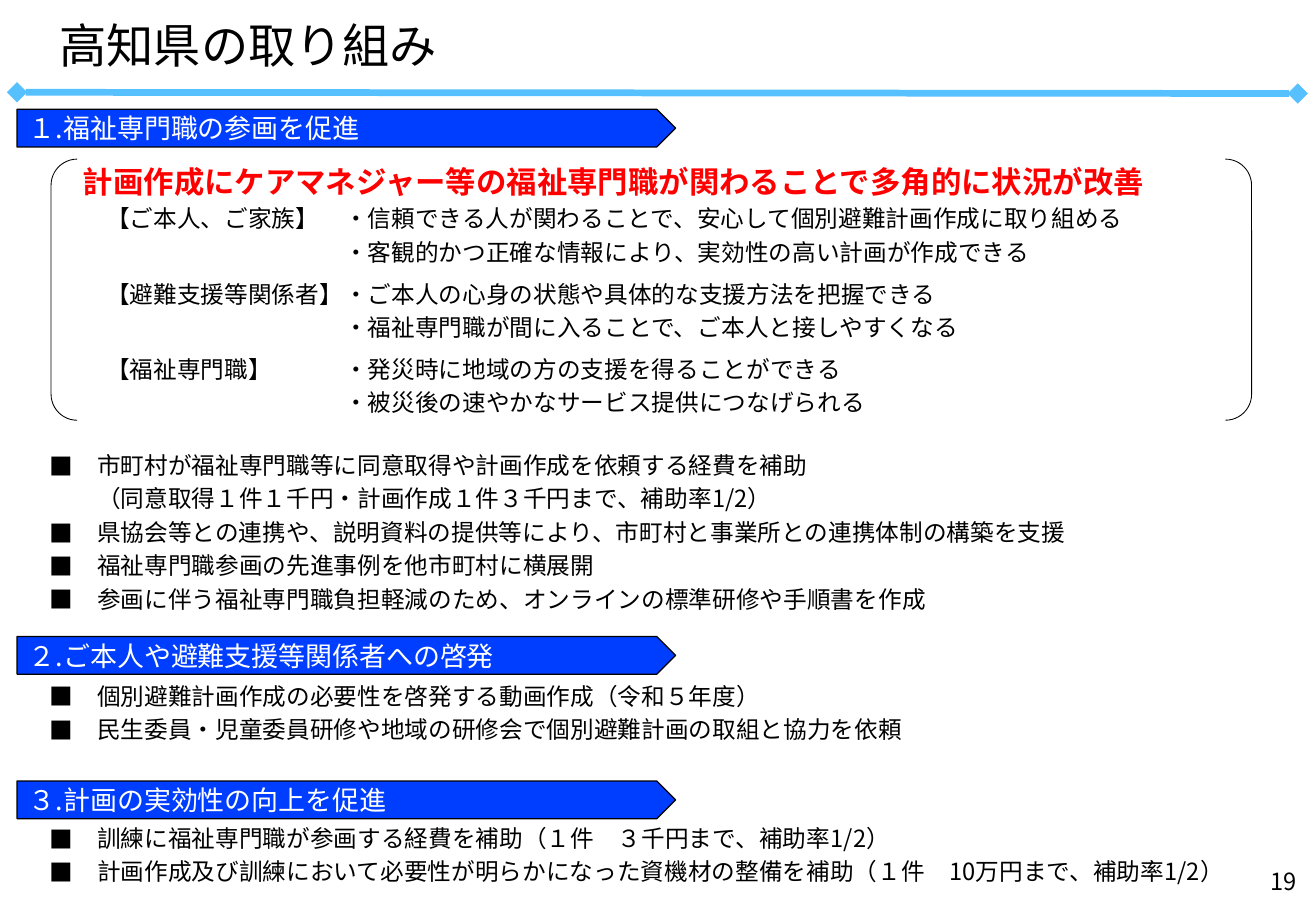
from lxml import etree
from pptx import Presentation
from pptx.dml.color import RGBColor
from pptx.enum.shapes import MSO_CONNECTOR, MSO_SHAPE
from pptx.enum.text import MSO_ANCHOR, MSO_AUTO_SIZE, PP_ALIGN
from pptx.oxml.ns import qn
from pptx.util import Inches, Pt

LEFT, RIGHT = PP_ALIGN.LEFT, PP_ALIGN.RIGHT
TOP, MIDDLE = MSO_ANCHOR.TOP, MSO_ANCHOR.MIDDLE
FONT = "Noto Sans CJK JP"
BLACK, WHITE, RED, BLUE, SKY = "000000", "FFFFFF", "FF0000", "003EFF", "57C0FF"


def rgb(value):
    return RGBColor.from_string(value)


def style(paragraph, size, color=BLACK, before=0, bold=False, align=LEFT):
    paragraph.alignment = align
    paragraph.space_before = Pt(before)
    font = paragraph.font
    font.name, font.size, font.bold = FONT, Pt(size), bold
    font.color.rgb = rgb(color)
    properties = paragraph._p.pPr.find(qn("a:defRPr"))
    latin = properties.find(qn("a:latin"))
    east_asian = etree.Element(qn("a:ea"), typeface=FONT)
    latin.addnext(east_asian)


prs = Presentation()
prs.slide_width, prs.slide_height = Inches(10.83), Inches(7.5)
slide = prs.slides.add_slide(prs.slide_layouts[4])
shapes = slide.shapes

# Title and rule below it
title = shapes.title
title.left, title.top = Inches(0), Inches(0.13)
title.width, title.height = Inches(10.83), Inches(0.48)
title.text_frame.text = "高知県の取り組み"
title.text_frame.margin_left = Inches(0.49)
title.text_frame.vertical_anchor = MIDDLE
title.text_frame.auto_size = MSO_AUTO_SIZE.NONE
style(title.text_frame.paragraphs[0], 28, before=5.6)

rule = shapes.add_connector(MSO_CONNECTOR.STRAIGHT, Inches(0.14), Inches(0.76),
                            Inches(10.68), Inches(0.77))
rule.line.color.rgb = rgb(SKY)
rule.line.width = Pt(4)
for end in ("a:headEnd", "a:tailEnd"):
    etree.SubElement(rule.line._get_or_add_ln(), qn(end), type="diamond")
etree.SubElement(rule._element.spPr, qn("a:effectLst"))

# Three sections: heading, heading top, list placeholder, list top, list height, items
sections = [
    ("１.福祉専門職の参画を促進", 0.9, 1, 3.67, 1.5, [
        "市町村が福祉専門職等に同意取得や計画作成を依頼する経費を補助",
        "（同意取得１件１千円・計画作成１件３千円まで、補助率1/2）",
        "県協会等との連携や、説明資料の提供等により、市町村と事業所との連携体制の構築を支援",
        "福祉専門職参画の先進事例を他市町村に横展開",
        "参画に伴う福祉専門職負担軽減のため、オンラインの標準研修や手順書を作成"]),
    ("２.ご本人や避難支援等関係者への啓発", 5.24, 2, 5.57, 0.64, [
        "個別避難計画作成の必要性を啓発する動画作成（令和５年度）",
        "民生委員・児童委員研修や地域の研修会で個別避難計画の取組と協力を依頼"]),
    ("３.計画の実効性の向上を促進", 6.43, 4, 6.74, 0.88, [
        "訓練に福祉専門職が参画する経費を補助（１件　３千円まで、補助率1/2）",
        "計画作成及び訓練において必要性が明らかになった資機材の整備を補助"
        "（１件　10万円まで、補助率1/2）"]),
]
for heading, heading_top, idx, list_top, list_height, items in sections:
    banner = shapes.add_shape(MSO_SHAPE.PENTAGON, Inches(0.14), Inches(heading_top),
                              Inches(5.42), Inches(0.31))
    banner.shadow.inherit = False
    banner.fill.solid()
    banner.fill.fore_color.rgb = rgb(BLUE)
    banner.line.color.rgb = rgb(BLACK)
    banner.line.width = Pt(0.75)
    banner.text_frame.text = heading
    banner.text_frame.vertical_anchor = MIDDLE
    style(banner.text_frame.paragraphs[0], 16, WHITE, before=3.2)

    measures = slide.placeholders[idx]
    measures.left, measures.top = Inches(0.22), Inches(list_top)
    measures.width, measures.height = Inches(10.59), Inches(list_height)
    frame = measures.text_frame
    frame.text = "\n".join(items)
    frame.auto_size = MSO_AUTO_SIZE.NONE
    frame.vertical_anchor = TOP
    frame.margin_left = frame.margin_right = 0
    frame.margin_top = frame.margin_bottom = Inches(0.04)
    for item in frame.paragraphs:
        style(item, 14, before=3)
        props = item._p.pPr
        props.set("marL", str(Inches(0.58)))
        continues = item.text.startswith("（")
        props.set("indent", str(0 if continues else Inches(-0.39)))
        defaults = props.find(qn("a:defRPr"))
        if continues:
            defaults.addprevious(etree.Element(qn("a:buNone")))
        else:
            defaults.addprevious(etree.Element(qn("a:buFont"), typeface=FONT))
            defaults.addprevious(etree.Element(qn("a:buChar"), char="■"))

# Bracketed benefits, aligned by tab stops
benefits = [
    ("【ご本人、ご家族】", ["・信頼できる人が関わることで、安心して個別避難計画作成に取り組める",
                 "・客観的かつ正確な情報により、実効性の高い計画が作成できる"]),
    ("【避難支援等関係者】", ["・ご本人の心身の状態や具体的な支援方法を把握できる",
                  "・福祉専門職が間に入ることで、ご本人と接しやすくなる"]),
    ("【福祉専門職】", ["・発災時に地域の方の支援を得ることができる",
               "・被災後の速やかなサービス提供につなげられる"]),
]
bracket = shapes.add_shape(MSO_SHAPE.DOUBLE_BRACKET, Inches(0.42), Inches(1.31),
                           Inches(9.88), Inches(2.15))
bracket.adjustments[0] = 0.1
bracket.shadow.inherit = False
bracket.fill.background()
bracket.line.color.rgb = rgb(BLACK)
bracket.line.width = Pt(0.5)
frame = bracket.text_frame
frame.margin_left = frame.margin_right = 0
frame.margin_top = frame.margin_bottom = Inches(0.04)
frame.vertical_anchor = MIDDLE
summary = frame.paragraphs[0]
summary.text = "計画作成にケアマネジャー等の福祉専門職が関わることで多角的に状況が改善"
style(summary, 18, RED, before=3, bold=True)
summary._p.pPr.set("marL", str(Inches(0.2)))
for group, (audience, points) in enumerate(benefits):
    for row, point in enumerate(points):
        benefit = frame.add_paragraph()
        benefit.text = f"\t{'' if row else audience}\t{point}"
        style(benefit, 14, before=8 if group and not row else 3)
        stops = etree.Element(qn("a:tabLst"))
        for stop in (0.39, 2.35):
            etree.SubElement(stops, qn("a:tab"), pos=str(Inches(stop)), algn="l")
        benefit._p.pPr.find(qn("a:defRPr")).addprevious(stops)

# Page number
page = shapes.add_textbox(Inches(8.5), Inches(7.05), Inches(2.27), Inches(0.4))
page.text_frame.word_wrap = True
page.text_frame.vertical_anchor = MIDDLE
page.text_frame.text = "19"
style(page.text_frame.paragraphs[0], 14, align=RIGHT)

# Unused layout slot
spare = slide.placeholders[3]._element
spare.getparent().remove(spare)

prs.save("out.pptx")
